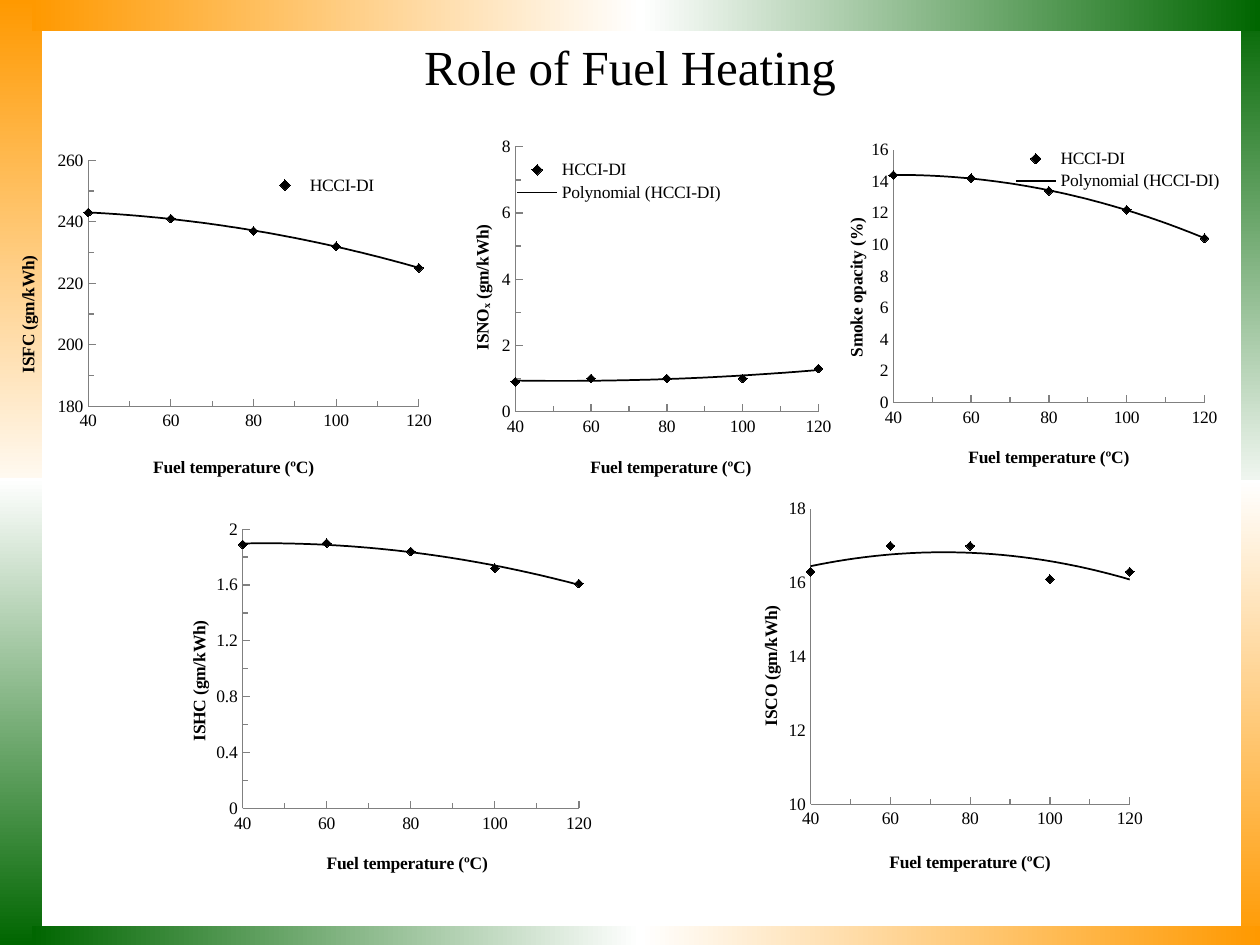
from lxml import etree
from pptx import Presentation
from pptx.chart.data import XyChartData
from pptx.dml.color import RGBColor
from pptx.enum.chart import XL_CHART_TYPE, XL_LEGEND_POSITION, XL_MARKER_STYLE, XL_TICK_MARK
from pptx.enum.shapes import MSO_SHAPE
from pptx.enum.text import MSO_ANCHOR, PP_ALIGN
from pptx.oxml import parse_xml
from pptx.oxml.ns import nsdecls, qn
from pptx.util import Inches, Pt

SCATTER = XL_CHART_TYPE.XY_SCATTER
LEGEND_RIGHT = XL_LEGEND_POSITION.RIGHT
DIAMOND = XL_MARKER_STYLE.DIAMOND
INSIDE, NO_TICK = XL_TICK_MARK.INSIDE, XL_TICK_MARK.NONE
RECTANGLE = MSO_SHAPE.RECTANGLE
MIDDLE, CENTER = MSO_ANCHOR.MIDDLE, PP_ALIGN.CENTER

COLORS = {"black": "000000", "axis": "808080", "white": "FFFFFF",
          "orange": "FF9900", "green": "006600"}
FONT = "Times New Roman"
COLUMNS, ROWS = 120, 90
DOWN, ACROSS = 270, 0
TEMPERATURES = (40, 60, 80, 100, 120)
TEMPERATURE_SCALE = (40, 120, 20)

BORDER_BARS = [
    ((0, 0, 4, 48.5), "orange", "white", DOWN),
    ((0, 45.5, 4, 44.5), "white", "green", DOWN),
    ((118.2, 0.5, 1.8, 48.2), "green", "white", DOWN),
    ((118.2, 45.7, 1.8, 44.3), "white", "orange", DOWN),
    ((3, 0, 58, 3), "orange", "white", ACROSS),
    ((61, 0, 59, 3), "white", "green", ACROSS),
    ((3, 88.2, 58, 1.8), "green", "white", ACROSS),
    ((61, 88.2, 59, 1.8), "white", "orange", ACROSS),
]

ISFC = dict(box=(0, 14, 42, 32), label="ISFC (gm/kWh)", values=(243, 241, 237, 232, 225),
            scale=(180, 260, 20), tick=INSIDE, plot=(0.2, 0.04, 0.75, 0.74),
            x_title=(0.34, 0.92), y_title=(0.03, 0.32),
            legend=(0.6, 0.08, 0.26, 0.07), hide_trend=True)
ISNO = dict(box=(43, 13, 38, 33), label="ISNOₓ (gm/kWh)", values=(0.9, 1, 1, 1, 1.3),
            scale=(0, 8, 2), tick=INSIDE, plot=(0.16, 0.03, 0.76, 0.77),
            x_title=(0.34, 0.92), y_title=(0.04, 0.25), legend=(0.15, 0.06, 0.54, 0.14))
SMOKE = dict(box=(79, 13, 38, 32), label="Smoke opacity (%)",
             values=(14.4, 14.2, 13.4, 12.2, 10.4),
             scale=(0, 16, 2), tick=NO_TICK, plot=(0.16, 0.04, 0.78, 0.76),
             x_title=(0.34, 0.92), y_title=(0.03, 0.24), legend=(0.47, 0.03, 0.53, 0.14))
ISHC = dict(box=(15, 49, 42.7, 35), label="ISHC (gm/kWh)", values=(1.89, 1.9, 1.84, 1.72, 1.61),
            scale=(0, 2, 0.4), tick=INSIDE, plot=(0.19, 0.04, 0.75, 0.76),
            x_title=(0.37, 0.91), y_title=(0.06, 0.28))
ISCO = dict(box=(70, 47, 40, 37), label="ISCO (gm/kWh)", values=(16.3, 17, 17, 16.1, 16.3),
            scale=(10, 18, 2), tick=NO_TICK, plot=(0.18, 0.04, 0.76, 0.76),
            x_title=(0.36, 0.91), y_title=(0.05, 0.28))


def rgb(name):
    """Return a named colour."""
    return RGBColor.from_string(COLORS[name])


def grid(presentation, box):
    """Turn columns and rows into slide lengths."""
    column, row = presentation.slide_width / COLUMNS, presentation.slide_height / ROWS
    return [round(length * unit) for length, unit in zip(box, (column, row) * 2)]


def apply(target, values):
    """Set several attributes on an object."""
    for name, value in values.items():
        setattr(target, name, value)


def style_font(font, size, **extra):
    """Give a font the slide's face and colour."""
    apply(font, {"name": FONT, "size": Pt(size), **extra})
    font.color.rgb = rgb("black")


def set_layout(parent, successor, shares, inner=False):
    """Place a chart part by shares of its chart."""
    for old in parent.findall(qn("c:layout")):
        parent.remove(old)
    layout = parse_xml(f"<c:layout {nsdecls('c')}><c:manualLayout/></c:layout>")
    entries = [("layoutTarget", "inner")] if inner else []
    entries += [("xMode", "edge"), ("yMode", "edge")]
    entries += list(zip("xywh", shares))
    for tag, value in entries:
        etree.SubElement(layout[0], qn(f"c:{tag}")).set("val", str(value))
    parent.find(qn(successor)).addprevious(layout)


def add_title(presentation, slide, box):
    """Write the slide heading."""
    frame = slide.shapes.add_textbox(*grid(presentation, box)).text_frame
    apply(frame, {"word_wrap": True, "vertical_anchor": MIDDLE})
    paragraph = frame.paragraphs[0]
    paragraph.alignment = CENTER
    run = paragraph.add_run()
    run.text = "Role of Fuel Heating"
    style_font(run.font, 28)


def add_border(presentation, slide):
    """Frame the slide with gradient bars."""
    group = slide.shapes.add_group_shape()
    for box, start, end, angle in BORDER_BARS:
        bar = group.shapes.add_shape(RECTANGLE, *grid(presentation, box))
        bar.shadow.inherit = False
        bar.line.fill.background()
        bar.fill.gradient()
        bar.fill.gradient_angle = angle
        for stop, color in zip(bar.fill.gradient_stops, (start, end)):
            stop.color.rgb = rgb(color)


def style_axis(axis, label, scale, tick, position):
    """Set one axis's scale, ticks and title."""
    low, high, step = scale
    apply(axis, {"minimum_scale": low, "maximum_scale": high, "major_unit": step,
                 "minor_unit": step / 2, "major_tick_mark": tick, "minor_tick_mark": tick,
                 "has_major_gridlines": False, "has_minor_gridlines": False})
    apply(axis.tick_labels, {"number_format": "General", "number_format_is_linked": False})
    axis.format.line.color.rgb = rgb("axis")
    axis.format.line.width = Pt(0.75)
    run = axis.axis_title.text_frame.paragraphs[0].add_run()
    run.text = label
    style_font(run.font, 10, bold=True)
    set_layout(axis.axis_title._element, "c:overlay", position)


def style_series(series):
    """Show diamond markers and a quadratic trend line."""
    series.format.line.fill.background()
    apply(series.marker, {"style": DIAMOND, "size": 5})
    series.marker.format.fill.solid()
    series.marker.format.fill.fore_color.rgb = rgb("black")
    series.marker.format.line.color.rgb = rgb("black")
    trend = parse_xml(
        f"<c:trendline {nsdecls('c', 'a')}><c:spPr><a:ln w='12700'><a:solidFill>"
        f"<a:srgbClr val='{COLORS['black']}'/></a:solidFill></a:ln></c:spPr>"
        "<c:trendlineType val='poly'/><c:order val='2'/>"
        "<c:dispRSqr val='0'/><c:dispEq val='0'/></c:trendline>")
    series._element.find(qn("c:xVal")).addprevious(trend)


def add_legend(chart, shares, hide_trend):
    """Place the legend, with or without the trend line's entry."""
    chart.has_legend = True
    apply(chart.legend, {"position": LEGEND_RIGHT, "include_in_layout": False})
    legend = chart.legend._element
    set_layout(legend, "c:overlay", shares)
    if hide_trend:
        legend.find(qn("c:layout")).addprevious(parse_xml(
            f"<c:legendEntry {nsdecls('c')}><c:idx val='1'/><c:delete val='1'/></c:legendEntry>"))


def add_fuel_chart(presentation, slide, box, label, values, scale, tick, plot,
                   x_title, y_title, legend=None, hide_trend=False):
    """Plot one engine quantity against fuel temperature."""
    data = XyChartData()
    points = data.add_series("HCCI-DI" if legend else "Series 1")
    for temperature, value in zip(TEMPERATURES, values):
        points.add_data_point(temperature, value)
    chart = slide.shapes.add_chart(SCATTER, *grid(presentation, box), data).chart
    apply(chart, {"has_title": False, "has_legend": False})
    style_font(chart.font, 10)
    style_axis(chart.category_axis, "Fuel temperature (ºC)", TEMPERATURE_SCALE, INSIDE, x_title)
    style_axis(chart.value_axis, label, scale, tick, y_title)
    body = chart.value_axis.axis_title._element.find(".//" + qn("a:bodyPr"))
    body.set("rot", "-5400000")
    body.set("vert", "horz")
    style_series(chart.plots[0].series[0])
    set_layout(chart._chartSpace.find(".//" + qn("c:plotArea")), "c:scatterChart", plot, inner=True)
    if legend:
        add_legend(chart, legend, hide_trend)


def main():
    """Build and save the slide."""
    presentation = Presentation()
    apply(presentation, {"slide_width": Inches(10), "slide_height": Inches(7.5)})
    slide = presentation.slides.add_slide(presentation.slide_layouts[6])
    add_title(presentation, slide, (6, 2, 108, 8.5))
    for quantity in (ISCO, ISHC, SMOKE, ISNO):
        add_fuel_chart(presentation, slide, **quantity)
    add_border(presentation, slide)
    add_fuel_chart(presentation, slide, **ISFC)
    presentation.save("out.pptx")


if __name__ == "__main__":
    main()
